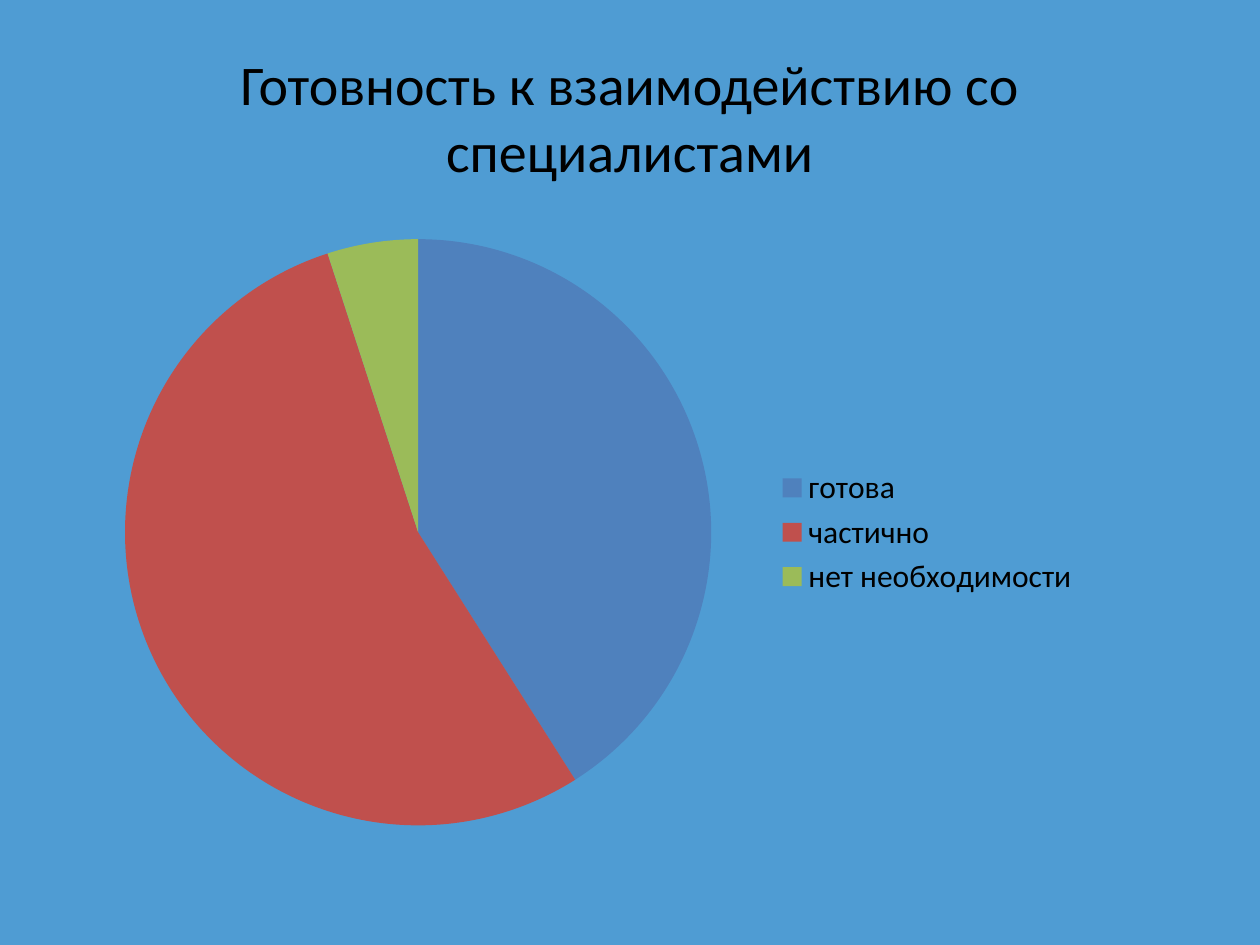
import pptx
import pptx.chart.data
import pptx.dml.color
import pptx.enum.chart
import pptx.enum.text
import pptx.oxml
import pptx.oxml.ns
import pptx.util
from pptx.util import Inches

TITLE = "Готовность к взаимодействию со специалистами"
ANSWERS = [("готова", 41), ("частично", 54), ("нет необходимости", 5)]

THEME = {
    "font": "Calibri",
    "title_size": 32,
    "legend_size": 18,
    "text": "000000",
    "background": "4F9CD3",
    "slices": ["4F81BD", "C0504D", "9BBB59"],
}
TITLE_AREA = (0.5, 0.3, 9, 1.25)
CHART_AREA = (0.5, 1.75, 8.17, 4.95)
PIE_LAYOUT = {"x": 0.06, "y": 0.03, "w": 0.57, "h": 0.94}


def color(name):
    return pptx.dml.color.RGBColor.from_string(name)


def style_font(font, size):
    font.name = THEME["font"]
    font.size = pptx.util.Pt(size)
    font.bold = False
    font.color.rgb = color(THEME["text"])


def add_title(slide):
    box = slide.shapes.add_textbox(*map(Inches, TITLE_AREA))
    frame = box.text_frame
    frame.word_wrap = True
    frame.vertical_anchor = pptx.enum.text.MSO_ANCHOR.MIDDLE
    frame.text = TITLE
    para = frame.paragraphs[0]
    para.alignment = pptx.enum.text.PP_ALIGN.CENTER
    style_font(para.runs[0].font, THEME["title_size"])


def place_pie(chart):
    """Fix the pie's position as fractions of the chart area."""
    plot_area = chart._chartSpace.chart.plotArea
    for layout in plot_area.findall(pptx.oxml.ns.qn("c:layout")):
        plot_area.remove(layout)
    sizes = "".join(f'<c:{key} val="{value}"/>' for key, value in PIE_LAYOUT.items())
    plot_area.insert(0, pptx.oxml.parse_xml(
        f'<c:layout {pptx.oxml.ns.nsdecls("c")}><c:manualLayout>'
        '<c:layoutTarget val="inner"/><c:xMode val="edge"/><c:yMode val="edge"/>'
        f'{sizes}</c:manualLayout></c:layout>'))


def add_pie(slide):
    data = pptx.chart.data.CategoryChartData()
    data.categories = [answer for answer, _ in ANSWERS]
    data.add_series("Series 1", [share for _, share in ANSWERS])
    chart = slide.shapes.add_chart(
        pptx.enum.chart.XL_CHART_TYPE.PIE, *map(Inches, CHART_AREA), data).chart
    chart.has_title = False
    style_font(chart.font, THEME["legend_size"])
    chart.has_legend = True
    chart.legend.position = pptx.enum.chart.XL_LEGEND_POSITION.RIGHT
    chart.legend.include_in_layout = False
    plot = chart.plots[0]
    plot.vary_by_categories = True
    for index, slice_color in enumerate(THEME["slices"]):
        fill = plot.series[0].points[index].format.fill
        fill.solid()
        fill.fore_color.rgb = color(slice_color)
    place_pie(chart)


def main():
    deck = pptx.Presentation()
    deck.slide_width, deck.slide_height = Inches(10), Inches(7.5)
    slide = deck.slides.add_slide(deck.slide_layouts[6])
    slide.background.fill.solid()
    slide.background.fill.fore_color.rgb = color(THEME["background"])
    add_title(slide)
    add_pie(slide)
    deck.save("out.pptx")


if __name__ == "__main__":
    main()
